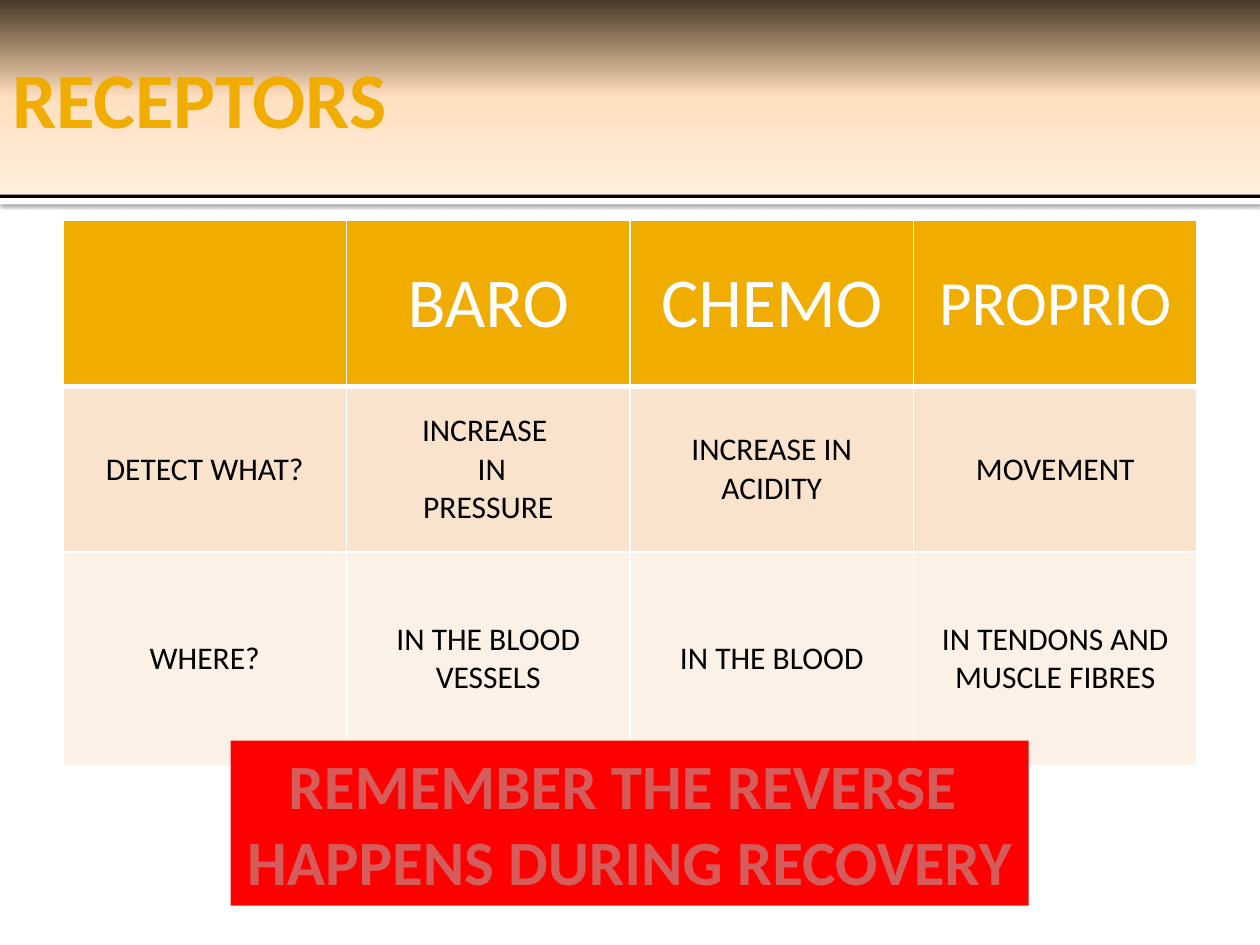
from lxml import etree
from pptx import Presentation
from pptx.dml.color import RGBColor
from pptx.enum.shapes import MSO_SHAPE
from pptx.enum.text import MSO_ANCHOR, MSO_AUTO_SIZE, PP_ALIGN
from pptx.oxml.ns import qn
from pptx.util import Cm, Pt

RECT = MSO_SHAPE.RECTANGLE
MIDDLE, TOP = MSO_ANCHOR.MIDDLE, MSO_ANCHOR.TOP
LEFT, CENTER = PP_ALIGN.LEFT, PP_ALIGN.CENTER
GOLD, WHITE, BLACK, RED = "F0AD00", "FFFFFF", "000000", "FF0000"


def write(frame, text, size, color, bold=False, align=CENTER):
    """Fill a text frame; each line of text becomes a paragraph."""
    frame.text = text
    for paragraph in frame.paragraphs:
        paragraph.alignment = align
        font = paragraph.runs[0].font
        font.name, font.size, font.bold = "Calibri", Pt(size), bold
        font.color.rgb = RGBColor.from_string(color)


def add_color(parent, color, alpha=100):
    node = etree.SubElement(parent, qn("a:srgbClr"), val=color)
    if alpha < 100:
        etree.SubElement(node, qn("a:alpha"), val=str(alpha * 1000))


prs = Presentation()
prs.slide_width, prs.slide_height = Cm(25.4), Cm(19.05)
slide = prs.slides.add_slide(prs.slide_layouts[5])
shapes = slide.shapes

# Header: title on a gradient, above a black rule and a white strip
title = shapes.title
title.left, title.top, title.width, title.height = Cm(0), Cm(0), Cm(25.4), Cm(3.91)
title.fill.gradient()
title.fill.gradient_angle = 270
stops = title.element.spPr.find(qn("a:gradFill")).find(qn("a:gsLst"))
for stop in list(stops):
    stops.remove(stop)
for position, color, alpha in [(0, "FFCF96", 27), (50, "FFDFBF", 100), (100, "FFEFE0", 100)]:
    add_color(etree.SubElement(stops, qn("a:gs"), pos=str(position * 1000)), color, alpha)
heading = title.text_frame
write(heading, "RECEPTORS", 45, GOLD, bold=True, align=LEFT)
heading.auto_size = MSO_AUTO_SIZE.NONE
heading.vertical_anchor = MIDDLE
heading.margin_left = Cm(0.25)
heading.margin_right = heading.margin_top = heading.margin_bottom = Cm(0.13)

bands = []
for top, height, color in [(3.99, 0.13, WHITE), (0, 3.99, BLACK)]:
    band = shapes.add_shape(RECT, Cm(0), Cm(top), Cm(25.4), Cm(height))
    band.fill.solid()
    band.fill.fore_color.rgb = RGBColor.from_string(color)
    band.line.fill.background()
    band.shadow.inherit = False
    title.element.addprevious(band.element)
    bands.append(band)
strip_effects = bands[0].element.spPr.find(qn("a:effectLst"))
strip_shadow = etree.SubElement(strip_effects, qn("a:outerShdw"), blurRad=str(Pt(2.5)),
                                dist=str(Pt(0.8)), dir="5400000", rotWithShape="0")
add_color(strip_shadow, BLACK, 60)

# Receptor table
rows = [
    ["", "BARO", "CHEMO", "PROPRIO"],
    ["DETECT WHAT?", "INCREASE \n IN\nPRESSURE", "INCREASE IN ACIDITY", "MOVEMENT"],
    ["WHERE?", "IN THE BLOOD VESSELS", "IN THE BLOOD", "IN TENDONS AND MUSCLE FIBRES"],
]
row_heights = [3.34, 3.34, 4.3]
row_fills = [GOLD, "F9E3CC", "FCF1E7"]
table = shapes.add_table(3, 4, Cm(1.27), Cm(4.45), Cm(22.86), Cm(sum(row_heights))).table
for r, texts in enumerate(rows):
    table.rows[r].height = Cm(row_heights[r])
    for c, text in enumerate(texts):
        cell = table.cell(r, c)
        cell.vertical_anchor = MIDDLE
        if text:
            header_size = 36 if text == "PROPRIO" else 40
            write(cell.text_frame, text, 18 if r else header_size, BLACK if r else WHITE)
        properties = cell._tc.get_or_add_tcPr()
        for side in ("lnL", "lnR", "lnT", "lnB"):
            width = 3 if r == 0 and side == "lnB" else 1
            border = etree.SubElement(properties, qn(f"a:{side}"), w=str(Pt(width)))
            add_color(etree.SubElement(border, qn("a:solidFill")), WHITE)
        cell.fill.solid()
        cell.fill.fore_color.rgb = RGBColor.from_string(row_fills[r])

# Reminder banner
reminder = shapes.add_shape(RECT, Cm(4.65), Cm(14.93), Cm(16.09), Cm(3.33))
reminder.fill.solid()
reminder.fill.fore_color.rgb = RGBColor.from_string(RED)
reminder.line.fill.background()
reminder.shadow.inherit = False
write(reminder.text_frame, "REMEMBER THE REVERSE \nHAPPENS DURING RECOVERY", 36, "D55C5B", bold=True)
reminder.text_frame.word_wrap = False
reminder.text_frame.vertical_anchor = TOP

prs.save("out.pptx")
